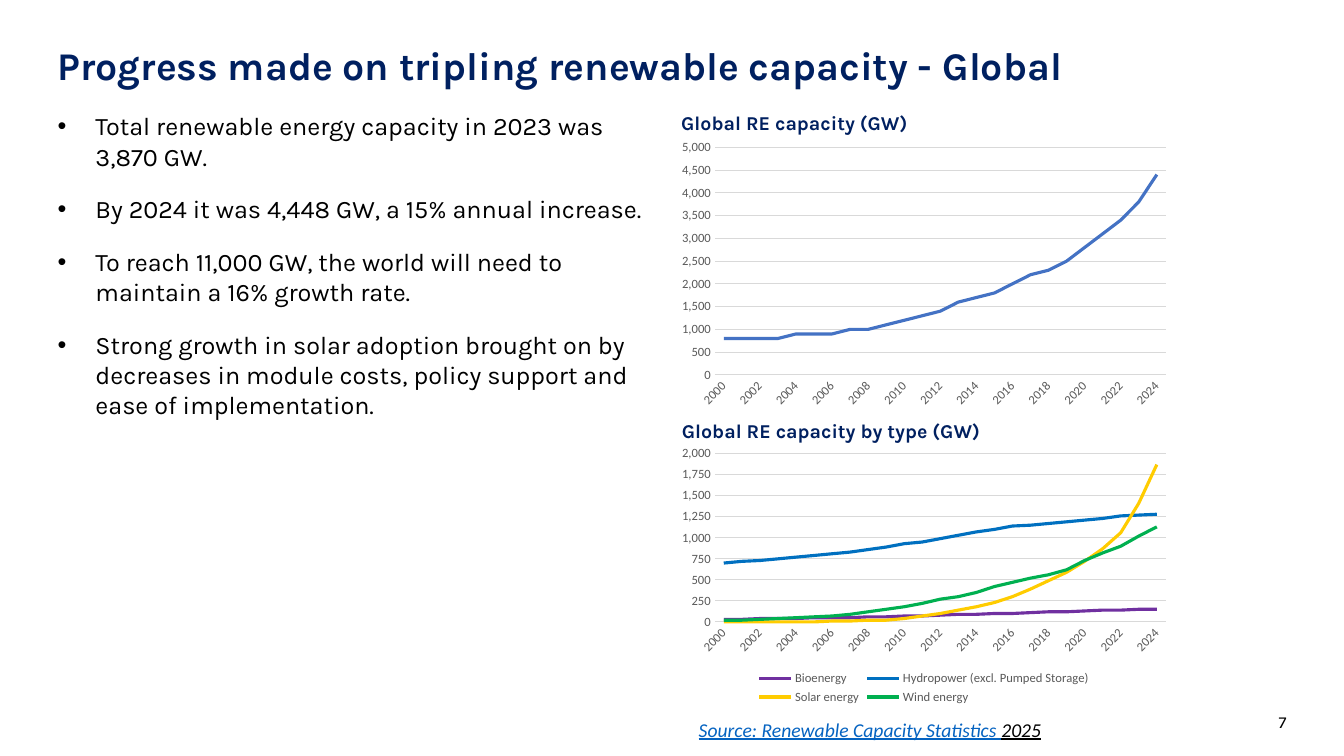
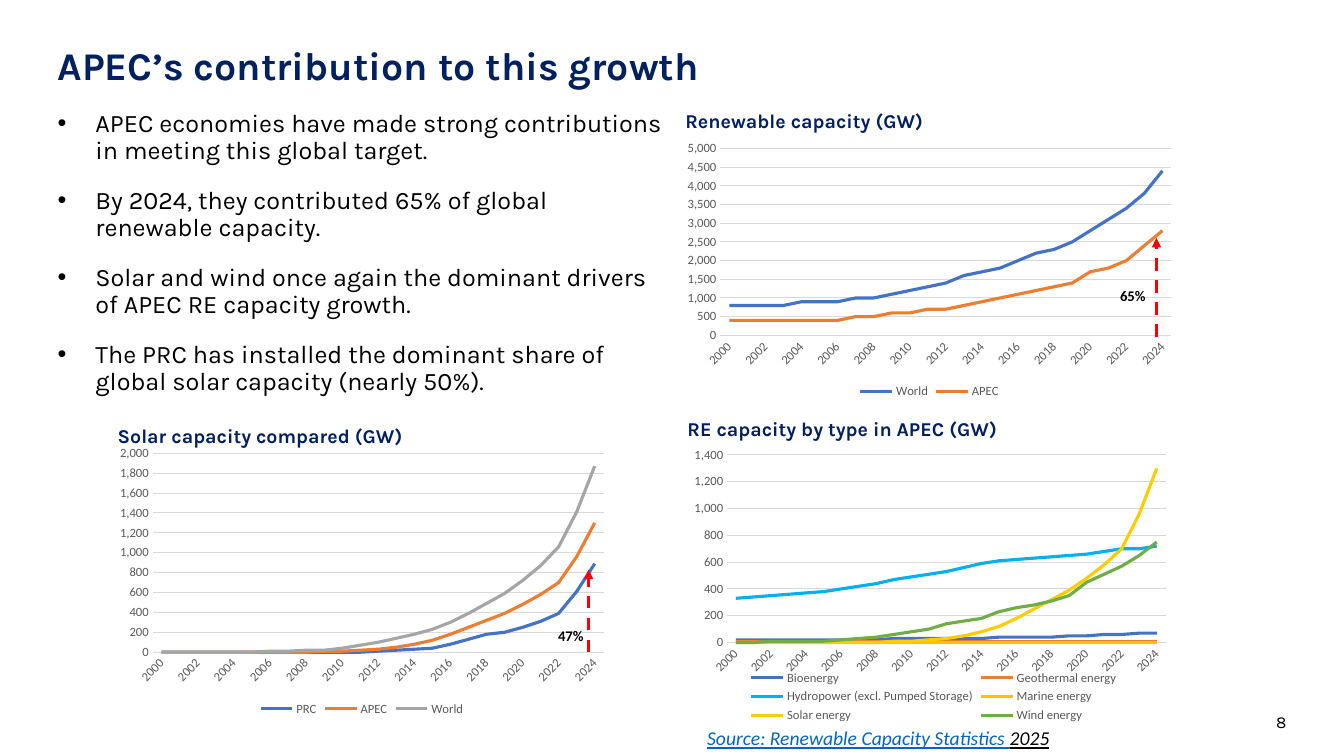
"""Build two slides on global and APEC renewable capacity growth."""
from lxml import etree
from pptx import Presentation
from pptx.chart.data import CategoryChartData as ChartData
from pptx.dml.color import RGBColor
from pptx.enum.chart import XL_CHART_TYPE as CT, XL_LEGEND_POSITION as LP, XL_TICK_MARK as TM
from pptx.enum.dml import MSO_LINE
from pptx.enum.shapes import MSO_CONNECTOR
from pptx.enum.text import MSO_ANCHOR, MSO_AUTO_SIZE, PP_ALIGN
from pptx.oxml.ns import qn
from pptx.util import Pt

rgb = RGBColor.from_string
NAVY, BLACK, GREY, RULE, LINK, RED = "002060", "000000", "595959", "D9D9D9", "0563C1", "FF0000"
BLUE, ORANGE, YELLOW, SILVER = "4472C4", "ED7D31", "FFCC00", "A5A5A5"
YEARS = [str(year) for year in range(2000, 2025)]

world = [800, 800, 800, 800, 900, 900, 900, 1000, 1000, 1100, 1200, 1300, 1400,
         1600, 1700, 1800, 2000, 2200, 2300, 2500, 2800, 3100, 3400, 3800, 4400]
world_bio = [30, 30, 40, 40, 40, 50, 50, 50, 60, 60, 70, 70, 80,
             90, 90, 100, 100, 110, 120, 120, 130, 140, 140, 150, 150]
world_hydro = [700, 720, 730, 750, 770, 790, 810, 830, 860, 890, 930, 950, 990,
               1030, 1070, 1100, 1140, 1150, 1170, 1190, 1210, 1230, 1260, 1270, 1280]
world_solar = [0, 0, 0, 0, 0, 0, 10, 10, 20, 20, 40, 70, 100,
               140, 180, 230, 300, 390, 490, 590, 720, 870, 1060, 1410, 1870]
world_wind = [20, 20, 30, 40, 50, 60, 70, 90, 120, 150, 180, 220, 270,
              300, 350, 420, 470, 520, 560, 620, 730, 820, 900, 1020, 1130]
apec = [400, 400, 400, 400, 400, 400, 400, 500, 500, 600, 600, 700, 700,
        800, 900, 1000, 1100, 1200, 1300, 1400, 1700, 1800, 2000, 2400, 2800]
apec_bio = [20] * 9 + [30] * 6 + [40] * 4 + [50, 50, 60, 60, 70, 70]
apec_hydro = [330, 340, 350, 360, 370, 380, 400, 420, 440, 470, 490, 510, 530,
              560, 590, 610, 620, 630, 640, 650, 660, 680, 700, 700, 720]
apec_solar = [0] * 9 + [10, 10, 20, 30, 50, 80, 120, 180, 250, 320, 390, 480, 580, 700, 960, 1300]
apec_wind = [0, 0, 10, 10, 10, 10, 20, 30, 40, 60, 80, 100, 140,
             160, 180, 230, 260, 280, 310, 350, 450, 510, 570, 650, 750]
prc_solar = [0] * 12 + [10, 20, 30, 40, 80, 130, 180, 200, 250, 310, 390, 610, 890]

slides = [
    dict(
        title="Progress made on tripling renewable capacity - Global",
        number="7", body_height=384, spacing=1.0, source=(492, 509),
        bullets=[
            "Total renewable energy capacity in 2023 was 3,870 GW.",
            "By 2024 it was 4,448 GW, a 15% annual increase.",
            "To reach 11,000 GW, the world will need to maintain a 16% growth rate.",
            "Strong growth in solar adoption brought on by decreases in module costs, "
            "policy support and ease of implementation.",
        ],
        charts=[
            (480, 96, 199, 5000, 500, None, [("Series 1", BLUE, world)]),
            (480, 315, 191, 2000, 250, None, [
                ("Bioenergy", "7030A0", world_bio),
                ("Hydropower (excl. Pumped Storage)", "0070C0", world_hydro),
                ("Solar energy", YELLOW, world_solar),
                ("Wind energy", "00B050", world_wind),
            ]),
        ],
        captions=[(479.5, 75.5, "Global RE capacity (GW)"),
                  (480, 296, "Global RE capacity by type (GW)")],
        arrows=[],
    ),
    dict(
        title="APEC’s contribution to this growth",
        number="8", body_height=223, spacing=0.9, source=(498, 515),
        bullets=[
            "APEC economies have made strong contributions in meeting this global target.",
            "By 2024, they contributed 65% of global renewable capacity.",
            "Solar and wind once again the dominant drivers of APEC RE capacity growth.",
            "The PRC has installed the dominant share of global solar capacity (nearly 50%).",
        ],
        charts=[
            (484, 97, 191, 5000, 500, None, [("World", BLUE, world), ("APEC", ORANGE, apec)]),
            (487, 319, 200, 1400, 200, (0.09, 0.03, 0.87, 0.67), [
                ("Bioenergy", BLUE, apec_bio),
                ("Geothermal energy", ORANGE, [10] * 25),
                ("Hydropower (excl. Pumped Storage)", "00B0F0", apec_hydro),
                ("Marine energy", "FFC000", [0] * 25),
                ("Solar energy", YELLOW, apec_solar),
                ("Wind energy", "70AD47", apec_wind),
            ]),
            (78.5, 314.5, 200, 2000, 200, None, [
                ("PRC", BLUE, prc_solar),
                ("APEC", ORANGE, apec_solar),
                ("World", SILVER, world_solar),
            ]),
        ],
        captions=[(482.5, 74, "Renewable capacity (GW)"),
                  (484, 294, "RE capacity by type in APEC (GW)"),
                  (77, 299, "Solar capacity compared (GW)")],
        arrows=[(826, 240.5, 170, 793, 201, "65%"), (420.5, 466, 407, 391.5, 444, "47%")],
    ),
]


def add_text(s, x, y, w, h, text, size, color, name="Karla", bold=False):
    """Add a one-paragraph text box and return its paragraph."""
    tf = s.shapes.add_textbox(Pt(x), Pt(y), Pt(w), Pt(h)).text_frame
    tf.word_wrap = True
    p = tf.paragraphs[0]
    p.add_run().text = text
    p.font.name, p.font.size, p.font.bold = name, Pt(size), bold
    p.font.color.rgb = rgb(color)
    return p


def add_line_chart(s, x, y, h, top, step, layout, series):
    """Add a line chart by year, with a legend when it has several series."""
    data = ChartData(number_format="#,##0")
    data.categories = YEARS
    for name, _, values in series:
        data.add_series(name, values)
    chart = s.shapes.add_chart(CT.LINE, Pt(x), Pt(y), Pt(360), Pt(h), data).chart
    chart.has_title = False
    chart.font.name, chart.font.size = "Calibri", Pt(10)
    chart.font.color.rgb = rgb(BLACK)
    plot, cat, val = chart.plots[0], chart.category_axis, chart.value_axis
    plot.vary_by_categories = False
    for line, (_, color, _) in zip(plot.series, series):
        line.smooth = False
        line.format.line.width = Pt(2.25)
        line.format.line.color.rgb = rgb(color)
    val.minimum_scale, val.maximum_scale, val.major_unit = 0, top, step
    val.tick_labels.number_format = "#,##0"
    val.tick_labels.number_format_is_linked = False
    val.format.line.fill.background()
    for rule in (cat.format.line, val.major_gridlines.format.line):
        rule.width = Pt(0.75)
        rule.color.rgb = rgb(RULE)
    chart.has_legend = len(series) > 1
    fonts = [cat.tick_labels.font, val.tick_labels.font]
    if chart.has_legend:
        chart.legend.position = LP.BOTTOM
        chart.legend.include_in_layout = False
        fonts.append(chart.legend.font)
    for font in fonts:
        font.name, font.size = "Calibri", Pt(9)
        font.color.rgb = rgb(GREY)
    for axis in (cat, val):
        axis.major_tick_mark = axis.minor_tick_mark = TM.NONE
    cat_xml = chart.element.xpath(".//c:catAx")[0]
    cat_xml.find(qn("c:txPr")).find(qn("a:bodyPr")).set("rot", "-2700000")
    skip = etree.Element(qn("c:tickLblSkip"), val="2")
    cat_xml.find(qn("c:noMultiLvlLbl")).addprevious(skip)
    if layout:
        area = chart.element.xpath(".//c:plotArea")[0]
        for old in area.findall(qn("c:layout")):
            area.remove(old)
        box = etree.Element(qn("c:layout"))
        area.insert(0, box)
        manual = etree.SubElement(box, qn("c:manualLayout"))
        tags = ("layoutTarget", "xMode", "yMode", "x", "y", "w", "h")
        for tag, value in zip(tags, ("inner", "edge", "edge") + layout):
            etree.SubElement(manual, qn("c:" + tag), val=str(value))


prs = Presentation()
prs.slide_width, prs.slide_height = Pt(960), Pt(540)

for d in slides:
    s = prs.slides.add_slide(prs.slide_layouts[1])
    title, body = s.shapes.title, s.placeholders[1]
    title.left, title.top, title.width, title.height = Pt(34), Pt(24.5), Pt(892), Pt(42.5)
    body.left, body.top, body.width, body.height = Pt(34), Pt(75.5), Pt(448), Pt(d["body_height"])

    tf = title.text_frame
    tf.text = d["title"]
    tf.auto_size, tf.vertical_anchor = MSO_AUTO_SIZE.NONE, MSO_ANCHOR.BOTTOM
    p = tf.paragraphs[0]
    p.alignment, p.line_spacing = PP_ALIGN.LEFT, 0.9
    p.font.name, p.font.size, p.font.bold = "Karla", Pt(28), True
    p.font.color.rgb = rgb(NAVY)

    tf = body.text_frame
    tf.text = "\n".join(d["bullets"])
    tf.auto_size = MSO_AUTO_SIZE.NONE
    for i, p in enumerate(tf.paragraphs):
        p.line_spacing = d["spacing"]
        p.space_before, p.space_after = Pt(10 if i else 0), Pt(6)
        p.font.name, p.font.size = "Karla", Pt(18)
        p.font.color.rgb = rgb(BLACK)

    for chart_args in d["charts"]:
        add_line_chart(s, *chart_args)
    for x, y, text in d["captions"]:
        add_text(s, x, y, 360, 24.5, text, 14, NAVY, bold=True)

    for x, bottom, top, label_x, label_y, share in d["arrows"]:
        arrow = s.shapes.add_connector(MSO_CONNECTOR.STRAIGHT, Pt(x), Pt(bottom), Pt(x), Pt(top))
        arrow.line.width, arrow.line.dash_style = Pt(2.25), MSO_LINE.DASH
        arrow.line.color.rgb = rgb(RED)
        sp_pr = arrow.element.spPr
        etree.SubElement(sp_pr.find(qn("a:ln")), qn("a:tailEnd"), type="triangle")
        etree.SubElement(sp_pr, qn("a:effectLst"))
        add_text(s, label_x, label_y, 39.5, 20, share, 10.5, BLACK, "Calibri", True)

    p = add_text(s, *d["source"], 390, 24.5, "Source: Renewable Capacity Statistics ", 14, LINK, "Calibri")
    p.font.italic = p.font.underline = True
    r = p.add_run()
    r.text = "2025"
    r.font.color.rgb = rgb(BLACK)

    p = add_text(s, 710, 505, 216, 20, d["number"], 12, BLACK)
    p.alignment = PP_ALIGN.RIGHT

prs.save("out.pptx")
